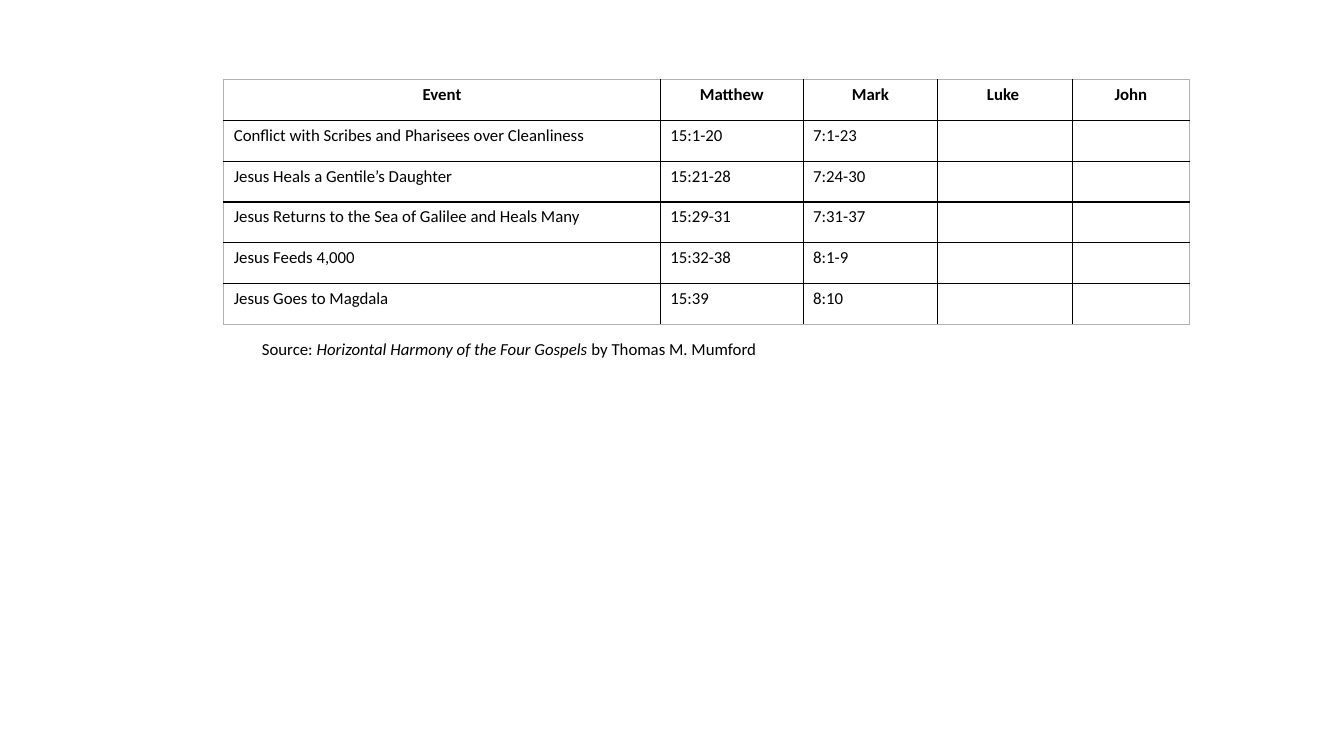
from lxml import etree
from pptx import Presentation
from pptx.dml.color import RGBColor
from pptx.enum.text import MSO_AUTO_SIZE, PP_ALIGN
from pptx.oxml.ns import qn
from pptx.util import Cm, Pt

CENTER, LEFT = PP_ALIGN.CENTER, PP_ALIGN.LEFT
GROW = MSO_AUTO_SIZE.SHAPE_TO_FIT_TEXT
INK, EDGE = "000000", "B2B2B2"

ROWS = [
    ("Event", "Matthew", "Mark", "Luke ", "John"),
    ("Conflict with Scribes and Pharisees over Cleanliness", "15:1-20", "7:1-23", "", ""),
    ("Jesus Heals a Gentile’s Daughter", "15:21-28", "7:24-30", "", ""),
    ("Jesus Returns to the Sea of Galilee and Heals Many", "15:29-31", "7:31-37", "", ""),
    ("Jesus Feeds 4,000", "15:32-38", "8:1-9", "", ""),
    ("Jesus Goes to Magdala", "15:39", "8:10", "", ""),
]
SOURCE = [
    ("Source: ", False),
    ("Horizontal Harmony of the Four Gospels ", True),
    ("by Thomas M. Mumford", False),
]
WIDTHS = [Cm(w) for w in (11, 3.6, 3.39, 3.39, 2.96)]
HEIGHT = Cm(1.03)


def color(code):
    return RGBColor.from_string(code)


def style(para, bold=False):
    font = para.font
    font.name, font.size, font.bold = "Calibri", Pt(12), bold
    font.color.rgb = color(INK)


def border(cell, sides):
    props = cell._tc.get_or_add_tcPr()
    for place, (side, code) in enumerate(sides.items()):
        line = etree.Element(qn(f"a:ln{side}"), w=str(Pt(1)))
        fill = etree.SubElement(line, qn("a:solidFill"))
        etree.SubElement(fill, qn("a:srgbClr"), val=code)
        props.insert(place, line)


def add_grid(slide):
    rows, cols = len(ROWS), len(WIDTHS)
    frame = slide.shapes.add_table(
        rows, cols, Cm(5.64), Cm(2), sum(WIDTHS), HEIGHT * rows)
    table = frame.table
    for col, width in zip(table.columns, WIDTHS):
        col.width = width
    for r, texts in enumerate(ROWS):
        table.rows[r].height = HEIGHT
        for c, text in enumerate(texts):
            cell = table.cell(r, c)
            cell.text = text
            cell.fill.background()
            para = cell.text_frame.paragraphs[0]
            para.alignment = CENTER if r == 0 else LEFT
            style(para, r == 0)
            outer = {"L": c == 0, "R": c == cols - 1, "T": r == 0, "B": r == rows - 1}
            border(cell, {side: EDGE if out else INK for side, out in outer.items()})


def add_source(slide):
    box = slide.shapes.add_textbox(Cm(6.35), Cm(8.41), Cm(21.8), Cm(0.77))
    frame = box.text_frame
    frame.word_wrap = True
    frame.auto_size = GROW
    para = frame.paragraphs[0]
    style(para)
    for text, slant in SOURCE:
        run = para.add_run()
        run.text = text
        run.font.italic = slant


def main():
    deck = Presentation()
    deck.slide_width, deck.slide_height = Cm(33.87), Cm(19.05)
    slide = deck.slides.add_slide(deck.slide_layouts[6])
    add_grid(slide)
    add_source(slide)
    deck.save("out.pptx")


if __name__ == "__main__":
    main()
